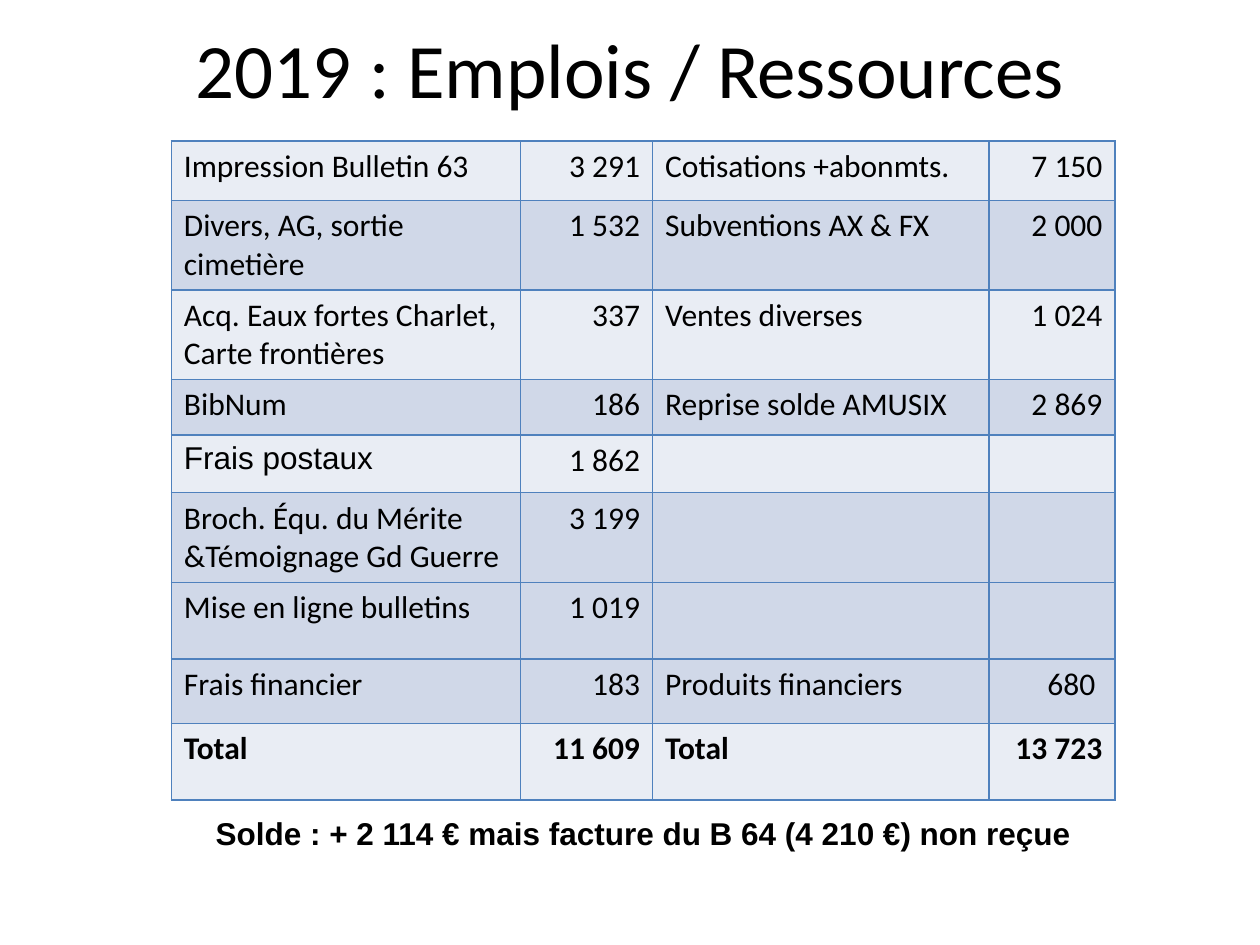
from lxml.etree import SubElement
from pptx import Presentation
from pptx.dml.color import RGBColor
from pptx.enum.text import MSO_ANCHOR, PP_ALIGN
from pptx.oxml.ns import qn
from pptx.util import Inches, Pt

COLORS = {"text": "000000", "light": "E9EDF4", "dark": "D0D8E8", "border": "4F81BD"}
TITLE = "2019 : Emplois / Ressources"
BALANCE = "Solde : + 2 114 € mais facture du B 64 (4 210 €) non reçue"
ENTRIES = [
    (0.47, "light", ("Impression Bulletin 63", "3 291", "Cotisations +abonmts.", "7 150")),
    (0.71, "dark", ("Divers, AG, sortie cimetière", "1 532", "Subventions AX & FX", "2 000")),
    (0.71, "light", ("Acq. Eaux fortes Charlet, Carte frontières", "337", "Ventes diverses", "1 024")),
    (0.44, "dark", ("BibNum", "186", "Reprise solde AMUSIX", "2 869")),
    (0.46, "light", ("Frais postaux", "1 862", "", "")),
    (0.71, "dark", ("Broch. Équ. du Mérite &Témoignage Gd Guerre", "3 199", "", "")),
    (0.61, "dark", ("Mise en ligne bulletins", "1 019", "", "")),
    (0.51, "dark", ("Frais financier", "183", "Produits financiers", "680 ")),
    (0.61, "light", ("Total", "11 609", "Total", "13 723")),
]
COLUMN_WIDTHS = (2.77, 1.05, 2.67, 1.0)
LEFT, TOP = 1.36, 1.12
WIDTH = sum(COLUMN_WIDTHS)
HEIGHT = sum(height for height, _, _ in ENTRIES)


def write(frame, text, size, font, align, bold=False):
    paragraph = frame.paragraphs[0]
    paragraph.alignment = align
    run = paragraph.add_run()
    run.text = text
    run.font.size = Pt(size)
    run.font.name = font
    run.font.bold = bold
    run.font.color.rgb = RGBColor.from_string(COLORS["text"])


def add_borders(cell):
    properties = cell._tc.get_or_add_tcPr()
    for side in ("a:lnL", "a:lnR", "a:lnT", "a:lnB"):
        line = SubElement(properties, qn(side), w=str(Pt(1)))
        SubElement(SubElement(line, qn("a:solidFill")), qn("a:srgbClr"), val=COLORS["border"])


def add_accounts(slide):
    accounts = slide.shapes.add_table(
        len(ENTRIES), len(COLUMN_WIDTHS),
        Inches(LEFT), Inches(TOP), Inches(WIDTH), Inches(HEIGHT),
    ).table
    accounts.first_row = accounts.horz_banding = False
    for column, width in zip(accounts.columns, COLUMN_WIDTHS):
        column.width = Inches(width)
    for row, (height, shade, texts) in zip(accounts.rows, ENTRIES):
        row.height = Inches(height)
        for index, (cell, text) in enumerate(zip(row.cells, texts)):
            add_borders(cell)
            cell.fill.solid()
            cell.fill.fore_color.rgb = RGBColor.from_string(COLORS[shade])
            if text:
                font = "Arial" if text == "Frais postaux" else "Calibri"
                align = PP_ALIGN.RIGHT if index % 2 else PP_ALIGN.LEFT
                write(cell.text_frame, text, 18, font, align, texts[0] == "Total")


def main():
    deck = Presentation()
    deck.slide_width, deck.slide_height = Inches(10), Inches(7.5)
    slide = deck.slides.add_slide(deck.slide_layouts[5])

    title = slide.shapes.title
    title.left, title.top = Inches(0.81), Inches(0.02)
    title.width, title.height = Inches(8.39), Inches(1.04)
    title.text_frame.vertical_anchor = MSO_ANCHOR.MIDDLE
    write(title.text_frame, TITLE, 44, "Calibri", PP_ALIGN.CENTER)

    add_accounts(slide)

    balance = slide.shapes.add_textbox(
        Inches(LEFT), Inches(6.41), Inches(WIDTH), Inches(0.4)
    ).text_frame
    balance.word_wrap = True
    write(balance, BALANCE, 18, "Arial", PP_ALIGN.CENTER, True)
    deck.save("out.pptx")


if __name__ == "__main__":
    main()
